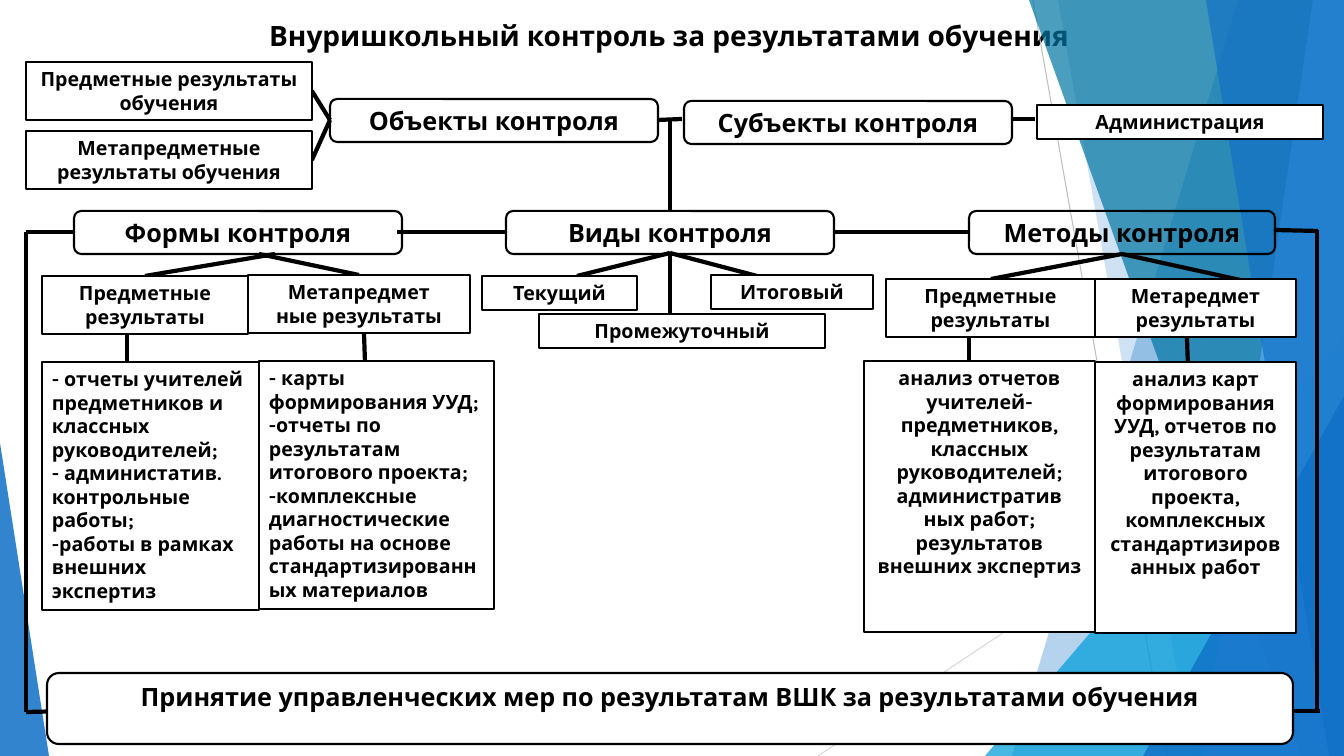
from lxml import etree
from pptx import Presentation
from pptx.dml.color import RGBColor
from pptx.enum.shapes import MSO_CONNECTOR as Connector, MSO_SHAPE as Shape
from pptx.enum.text import MSO_ANCHOR as Anchor, MSO_AUTO_SIZE as AutoSize, PP_ALIGN as Align
from pptx.oxml.ns import qn
from pptx.util import Emu, Pt

EMU_PER_PX = 914400 / 100.8
WIDTH, HEIGHT = 1344, 756

BLACK = RGBColor(0x00, 0x00, 0x00)
WHITE = RGBColor(0xFF, 0xFF, 0xFF)
GREY = RGBColor(0xBF, 0xBF, 0xBF)
LIGHT_GREY = RGBColor(0xD9, 0xD9, 0xD9)
BLUE = RGBColor(0x0F, 0x6F, 0xC6)
CYAN = RGBColor(0x00, 0x9D, 0xD9)
TEAL = RGBColor(0x00, 0x76, 0xA3)
SKY = RGBColor(0x59, 0xAA, 0xF2)

FONT = {"name": "Karla", "bold": True}

TITLE = "Внуришкольный контроль за результатами обучения"

# Backdrop bands reaching the right edge: top x, bottom x, colour, opacity %
BACK_BANDS = [(1238, 1012, BLUE, 30), (1058, 1192, BLUE, 20)]
FRONT_BANDS = [(1029, 1301, TEAL, 70), (1313, 1202, SKY, 70), (1206, 1329, BLUE, 65)]

# Connectors: x1, y1, x2, y2
LINKS = [
    # objects, subjects and their notes
    (312, 91, 330, 120), (312, 160, 330, 120), (658, 120, 682, 119),
    (1011, 119, 1035, 119), (670, 120, 670, 211),
    # forms, kinds and methods in a row
    (506, 232, 397, 232), (969, 232, 835, 232),
    # branches below the row
    (275, 254, 145, 276), (259, 254, 359, 275),
    (670, 253, 577, 276), (670, 253, 670, 313), (670, 253, 757, 276),
    (1122, 254, 991, 279), (1122, 254, 1254, 283),
    # results to details
    (127, 334, 127, 362), (364, 333, 365, 362),
    (969, 336, 969, 365), (1187, 338, 1188, 366),
    # outer brackets to the decision
    (74, 232, 26, 232), (26, 232, 26, 712), (74, 711, 26, 712),
    (1318, 231, 1274, 230), (1317, 230, 1317, 709), (1320, 711, 1273, 711),
]

# Rounded headings: left, top, width, text
HEADINGS = [
    (330, 99, 328, "Объекты контроля"),
    (684, 101, 328, "Субъекты контроля"),
    (506, 211, 328, "Виды контроля"),
    (74, 211, 328, "Формы контроля"),
    (969, 211, 306, "Методы контроля"),
]

# Centred boxes: left, top, width, height, paragraphs
BOXES = [
    (26, 62, 286, 58, ["Предметные результаты обучения"]),
    (26, 131, 286, 58, ["Метапредметные результаты обучения"]),
    (1037, 105, 286, 34, ["Администрация"]),
    (482, 276, 155, 34, ["Текущий"]),
    (539, 314, 286, 34, ["Промежуточный"]),
    (711, 275, 162, 34, ["Итоговый"]),
    (248, 275, 222, 58, ["Метапредмет", "ные результаты"]),
    (42, 276, 206, 58, ["Предметные результаты"]),
    (886, 279, 209, 58, ["Предметные результаты"]),
    (1095, 279, 201, 58, ["Метаредмет", "результаты"]),
    (864, 361, 231, 271, [
        "анализ отчетов учителей-предметников, классных руководителей; административ",
        "ных работ; результатов внешних экспертиз"]),
    (1095, 362, 201, 271, [
        "анализ карт формирования УУД, отчетов по результатам итогового проекта, "
        "комплексных стандартизированных работ"]),
]

# Left-aligned lists: left, top, width, height, paragraphs
LISTS = [
    (42, 362, 217, 248, [
        "- отчеты учителей предметников и классных руководителей;",
        "- администатив. контрольные работы;",
        "-работы в рамках внешних экспертиз"]),
    (259, 361, 235, 248, [
        "- карты формирования УУД;",
        "-отчеты по результатам итогового проекта;",
        "-комплексные диагностические работы на основе стандартизированных материалов"]),
]


def px(length):
    return Emu(round(length * EMU_PER_PX))


def write_text(shape, lines, size, align, anchor=Anchor.TOP):
    frame = shape.text_frame
    frame.word_wrap = True
    frame.auto_size = AutoSize.NONE
    frame.vertical_anchor = anchor
    frame.text = "\n".join(lines)
    for paragraph in frame.paragraphs:
        paragraph.alignment = align
        for name, value in {**FONT, "size": Pt(size)}.items():
            setattr(paragraph.font, name, value)
        paragraph.font.color.rgb = BLACK


def add_title(slide):
    title = slide.shapes.title
    title.left, title.top, title.width, title.height = map(px, (259, 13, 920, 44))
    write_text(title, [TITLE], 20, Align.LEFT)


def add_box(slide, kind, bounds, lines, size=14, align=Align.CENTER,
            anchor=Anchor.TOP, fill=WHITE):
    box = slide.shapes.add_shape(kind, *map(px, bounds))
    box.shadow.inherit = False
    if fill is None:
        box.fill.background()
    else:
        box.fill.solid()
        box.fill.fore_color.rgb = fill
    box.line.color.rgb = BLACK
    box.line.width = Pt(1.5)
    write_text(box, lines, size, align, anchor)


def add_line(slide, ends, color=BLACK, width=3):
    line = slide.shapes.add_connector(Connector.STRAIGHT, *map(px, ends))
    line.line.color.rgb = color
    line.line.width = Pt(width)
    etree.SubElement(line._element.spPr, qn("a:effectLst"))


def tint(shape, color, opacity):
    shape.shadow.inherit = False
    shape.line.fill.background()
    shape.fill.solid()
    shape.fill.fore_color.rgb = color
    color_element = shape._element.spPr.find(qn("a:solidFill"))[0]
    etree.SubElement(color_element, qn("a:alpha"), val=str(opacity * 1000))


def add_band(slide, top_x, bottom_x, color, opacity):
    builder = slide.shapes.build_freeform(top_x, 0, scale=EMU_PER_PX)
    builder.add_line_segments([(WIDTH, 0), (WIDTH, HEIGHT), (bottom_x, HEIGHT)])
    tint(builder.convert_to_shape(), color, opacity)


def add_corner(slide, left, top, width, apex, color, opacity):
    bounds = (left, top, width, HEIGHT - top)
    corner = slide.shapes.add_shape(Shape.ISOSCELES_TRIANGLE, *map(px, bounds))
    corner.adjustments[0] = apex
    tint(corner, color, opacity)


def add_backdrop(slide):
    add_line(slide, (1033, 0, 1167, HEIGHT), GREY, 0.75)
    add_line(slide, (WIDTH, 406, 818, HEIGHT), LIGHT_GREY, 0.75)
    for band in BACK_BANDS:
        add_band(slide, *band)
    add_corner(slide, 985, 336, 359, 1, CYAN, 72)
    for band in FRONT_BANDS:
        add_band(slide, *band)
    add_corner(slide, 1143, 396, 201, 1, BLUE, 80)
    add_corner(slide, 0, 443, 49, 0, BLUE, 85)


def main():
    presentation = Presentation()
    presentation.slide_width, presentation.slide_height = px(WIDTH), px(HEIGHT)
    slide = presentation.slides.add_slide(presentation.slide_layouts[5])

    add_backdrop(slide)
    add_title(slide)

    # Scheme: links first, boxes above them
    for ends in LINKS:
        add_line(slide, ends)
    for left, top, width, text in HEADINGS:
        add_box(slide, Shape.ROUNDED_RECTANGLE, (left, top, width, 43), [text],
                size=18, anchor=Anchor.MIDDLE, fill=None)
    for *bounds, lines in BOXES:
        add_box(slide, Shape.RECTANGLE, bounds, lines)
    for *bounds, lines in LISTS:
        add_box(slide, Shape.RECTANGLE, bounds, lines, align=Align.LEFT)

    # Decision
    add_box(slide, Shape.FLOWCHART_ALTERNATE_PROCESS, (47, 673, 1246, 71),
            ["Принятие управленческих мер по результатам ВШК за результатами обучения"],
            size=18)

    presentation.save("out.pptx")


if __name__ == "__main__":
    main()
